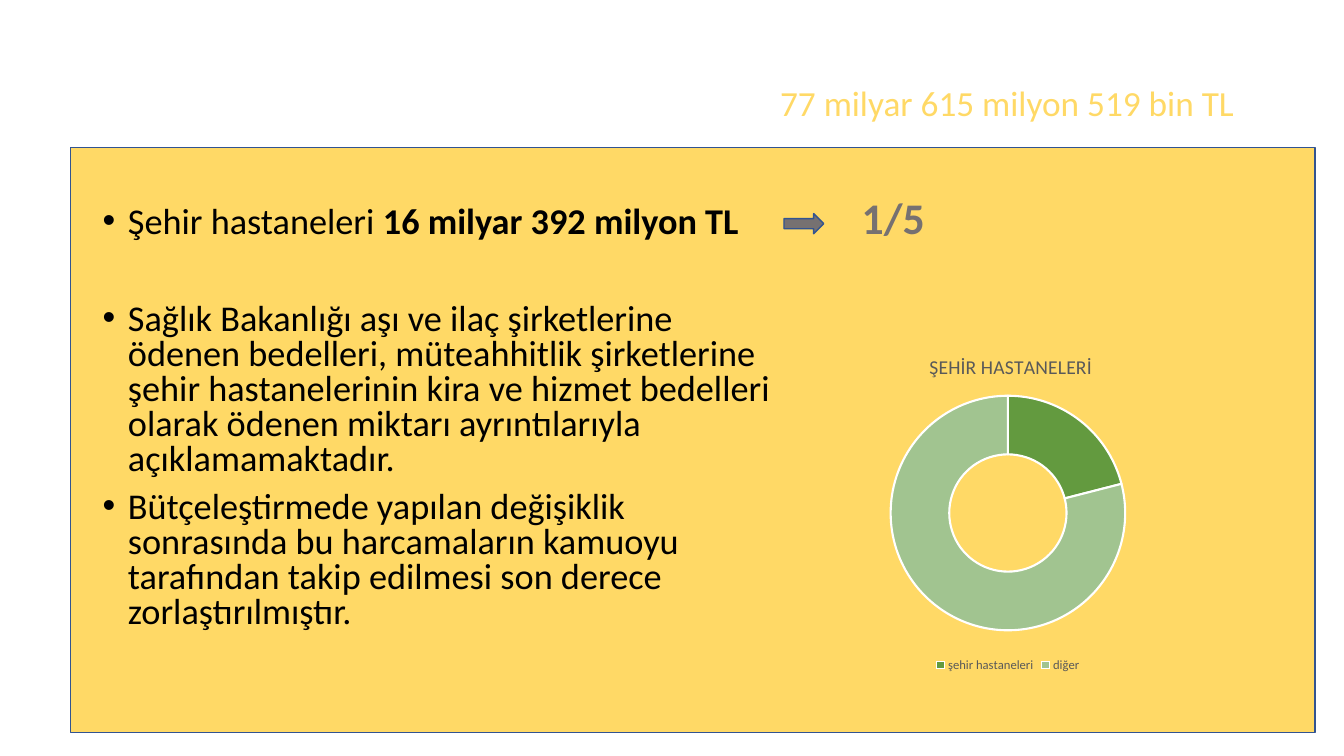
from lxml import etree
from pptx import Presentation
from pptx.chart.data import CategoryChartData
from pptx.dml.color import RGBColor
from pptx.enum.chart import XL_CHART_TYPE, XL_LEGEND_POSITION
from pptx.enum.shapes import MSO_SHAPE
from pptx.enum.text import MSO_ANCHOR, MSO_AUTO_SIZE, PP_ALIGN
from pptx.oxml import parse_xml
from pptx.oxml.ns import nsdecls, qn
from pptx.util import Pt

DOUGHNUT = XL_CHART_TYPE.DOUGHNUT
BOTTOM = XL_LEGEND_POSITION.BOTTOM
RECT, ARROW = MSO_SHAPE.RECTANGLE, MSO_SHAPE.RIGHT_ARROW
MIDDLE, TOP = MSO_ANCHOR.MIDDLE, MSO_ANCHOR.TOP
NO_FIT, LEFT = MSO_AUTO_SIZE.NONE, PP_ALIGN.LEFT

FONT = "Calibri"
YELLOW, GREY, BLUE, DARK = "FFD966", "767171", "325491", "595959"

TITLE = "77 milyar 615 milyon 519 bin TL"
RATIO = "1/5"
BULLETS = [
    (0, [("Şehir hastaneleri ", False), ("16 milyar 392 milyon TL", True)]),
    (44.5, [("Sağlık Bakanlığı aşı ve ilaç şirketlerine ödenen bedelleri, "
             "müteahhitlik şirketlerine şehir hastanelerinin kira ve hizmet "
             "bedelleri olarak ödenen miktarı ayrıntılarıyla "
             "açıklamamaktadır.", False)]),
    (10, [("Bütçeleştirmede yapılan değişiklik sonrasında bu harcamaların "
           "kamuoyu tarafından takip edilmesi son derece "
           "zorlaştırılmıştır.", False)]),
]
CHART_TITLE = "ŞEHİR HASTANELERİ"
SHARES = [("şehir hastaneleri", 21, "639A3F"), ("diğer", 79, "A1C490")]
PLOT = {"x": 0.3, "y": 0.18, "w": 0.4, "h": 0.69}
TITLE_AT = {"x": 0.36, "y": 0.05}


def rgb(value):
    return RGBColor.from_string(value)


def set_font(font, size, color, bold=False):
    font.name, font.size, font.bold = FONT, Pt(size), bold
    font.color.rgb = rgb(color)


def add_text(p, text, size, color="000000", bold=False, spacing=0.9):
    p.line_spacing = spacing
    p.alignment = LEFT
    r = p.add_run()
    r.text = text
    set_font(r.font, size, color, bold)


def place(sp, left, top, width, height, anchor):
    sp.left, sp.top, sp.width, sp.height = map(Pt, (left, top, width, height))
    tf = sp.text_frame
    tf.word_wrap, tf.auto_size, tf.vertical_anchor = True, NO_FIT, anchor
    return tf


def add_box(slide, kind, box, fill):
    sp = slide.shapes.add_shape(kind, *map(Pt, box))
    sp.shadow.inherit = False
    sp.fill.solid()
    sp.fill.fore_color.rgb = rgb(fill)
    sp.line.color.rgb = rgb(BLUE)
    sp.line.width = Pt(1)


def add_bullet(p):
    pPr = p._p.get_or_add_pPr()
    pPr.set("marL", str(Pt(18)))
    pPr.set("indent", str(-Pt(18)))
    etree.SubElement(pPr, qn("a:buFont")).set("typeface", "Arial")
    etree.SubElement(pPr, qn("a:buChar")).set("char", "•")


def make_layout(position, inner=False):
    target = '<c:layoutTarget val="inner"/>' if inner else ""
    modes = "".join(f'<c:{k}Mode val="edge"/>' for k in "xy")
    values = "".join(f'<c:{k} val="{v}"/>' for k, v in position.items())
    return parse_xml(f'<c:layout {nsdecls("c")}><c:manualLayout>{target}{modes}'
                     f'{values}</c:manualLayout></c:layout>')


def set_layout(parent, layout, index):
    for old in parent.findall(qn("c:layout")):
        parent.remove(old)
    parent.insert(index, layout)


def add_share_chart(slide):
    data = CategoryChartData()
    data.categories = [name for name, _, _ in SHARES]
    data.add_series("Series 1", [value for _, value, _ in SHARES])
    box = map(Pt, (510.5, 237.6, 419, 245.5))
    chart = slide.shapes.add_chart(DOUGHNUT, *box, data).chart
    set_font(chart.font, 10, "000000")
    chart.has_title = True
    add_text(chart.chart_title.text_frame.paragraphs[0], CHART_TITLE, 14, DARK,
             spacing=1.0)
    chart.chart_title.include_in_layout = False
    chart.has_legend = True
    chart.legend.position = BOTTOM
    chart.legend.include_in_layout = False
    set_font(chart.legend.font, 9, DARK)
    plot = chart.plots[0]
    plot.vary_by_categories = True
    for i, (_, _, color) in enumerate(SHARES):
        fmt = plot.series[0].points[i].format
        fmt.fill.solid()
        fmt.fill.fore_color.rgb = rgb(color)
        fmt.line.color.rgb = rgb("FFFFFF")
        fmt.line.width = Pt(1.5)
    area = chart._chartSpace.chart.plotArea
    set_layout(area, make_layout(PLOT, True), 0)
    set_layout(chart.chart_title._element, make_layout(TITLE_AT), 1)


def main():
    prs = Presentation()
    prs.slide_width, prs.slide_height = Pt(960), Pt(540)
    s = prs.slides.add_slide(prs.slide_layouts[1])
    title, body = s.placeholders

    tf = place(title, 550, 44, 339, 62, MIDDLE)
    add_text(tf.paragraphs[0], TITLE, 25.2, YELLOW)

    add_box(s, RECT, (50.4, 105.4, 889, 418), YELLOW)

    s.shapes._spTree.append(body._element)
    tf = place(body, 66.2, 144, 495, 343, TOP)
    for i, (before, runs) in enumerate(BULLETS):
        p = tf.add_paragraph() if i else tf.paragraphs[0]
        p.space_before = Pt(before)
        add_bullet(p)
        for text, bold in runs:
            add_text(p, text, 25.9, bold=bold, spacing=0.8)

    add_share_chart(s)

    tf = place(s.shapes.add_textbox(0, 0, 0, 0), 608.4, 126.7, 62, 62, MIDDLE)
    add_text(tf.paragraphs[0], RATIO, 31.2, GREY, True)
    add_box(s, ARROW, (560, 152.6, 28.4, 14.4), GREY)

    prs.save("out.pptx")


if __name__ == "__main__":
    main()
